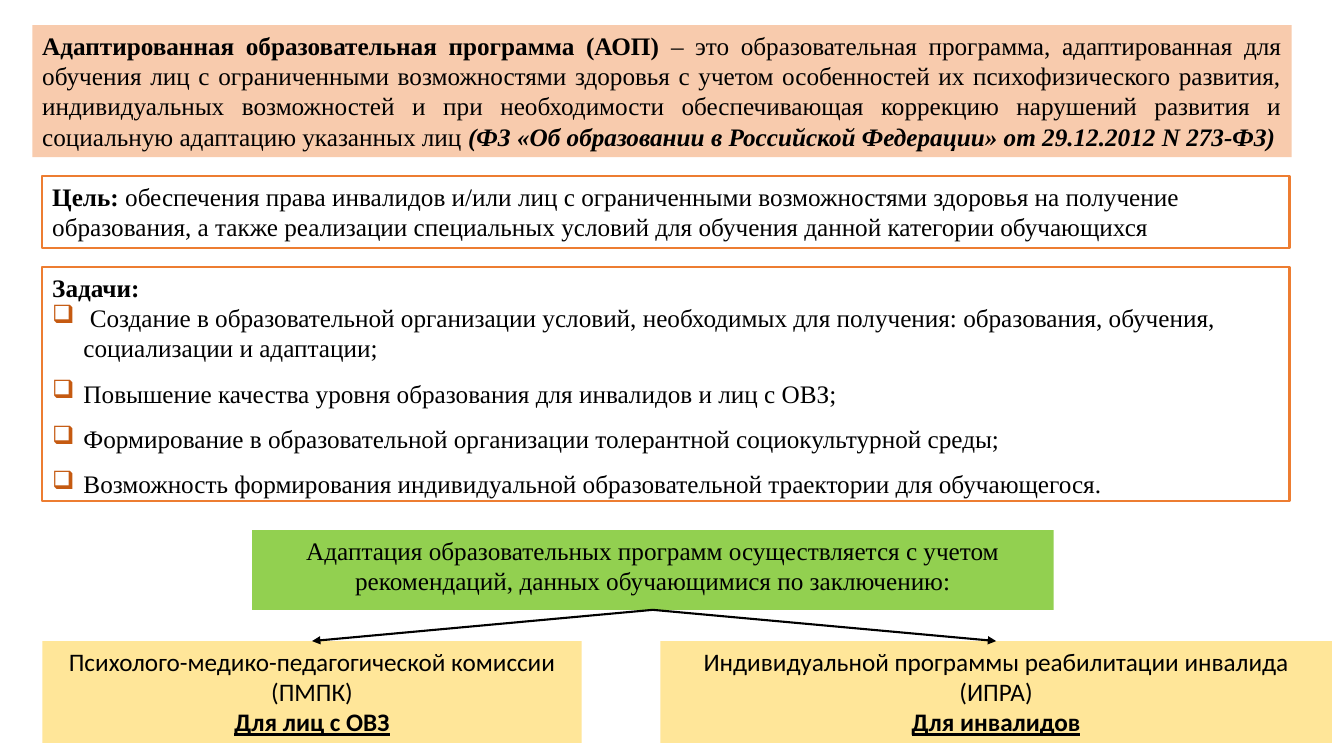
from lxml.etree import SubElement
from pptx import Presentation
from pptx.dml.color import RGBColor
from pptx.enum.shapes import MSO_CONNECTOR, MSO_SHAPE
from pptx.enum.text import MSO_ANCHOR, PP_ALIGN
from pptx.oxml.ns import qn
from pptx.util import Pt

PX = 9144  # EMU per px, 100 px to the inch
BLACK = RGBColor(0x00, 0x00, 0x00)
WHITE = RGBColor(0xFF, 0xFF, 0xFF)
PEACH = RGBColor(0xF8, 0xCB, 0xAD)
ORANGE = RGBColor(0xED, 0x7D, 0x31)
GREEN = RGBColor(0x92, 0xD0, 0x50)
YELLOW = RGBColor(0xFF, 0xE6, 0x99)
BULLET = "C55A11"
SERIF, SANS = "Times New Roman", "Calibri"
BULLET_INDENT = 31
TOP, BOTTOM = 0, 2

TASKS = [
    " Создание в образовательной организации условий, необходимых для получения: "
    "образования, обучения, социализации и адаптации;",
    "Повышение качества уровня образования для инвалидов и лиц с ОВЗ;",
    "Формирование в образовательной организации толерантной социокультурной среды;",
    "Возможность формирования индивидуальной образовательной траектории для обучающегося.",
]
COMMISSION = ["Психолого-медико-педагогической комиссии", "(ПМПК)"]
REHABILITATION = ["Индивидуальной программы реабилитации инвалида (ИПРА)"]


def add_panel(slide, box, fill, border=None):
    panel = slide.shapes.add_shape(MSO_SHAPE.RECTANGLE, *(n * PX for n in box))
    panel.shadow.inherit = False
    panel.fill.solid()
    panel.fill.fore_color.rgb = fill
    if border is None:
        panel.line.fill.background()
    else:
        panel.line.color.rgb = border
        panel.line.width = Pt(1.5)
    panel.text_frame.word_wrap = True
    panel.text_frame.vertical_anchor = MSO_ANCHOR.TOP
    return panel


def add_paragraph(panel, *runs, font=SERIF, align=PP_ALIGN.LEFT):
    """Fill the first empty paragraph or append one; runs are (text, styles) pairs."""
    frame = panel.text_frame
    paragraph = frame.paragraphs[0]
    if paragraph.runs:
        paragraph = frame.add_paragraph()
    paragraph.alignment = align
    paragraph.font.name = font
    paragraph.font.size = Pt(18)
    paragraph.font.color.rgb = BLACK
    for text, styles in runs:
        run = paragraph.add_run()
        run.text = text
        run.font.bold = "b" in styles
        run.font.italic = "i" in styles
        run.font.underline = "u" in styles
    return paragraph


def add_bullet(paragraph):
    props = paragraph._p.get_or_add_pPr()
    props.set("marL", str(BULLET_INDENT * PX))
    props.set("indent", str(-BULLET_INDENT * PX))
    bullet = SubElement(props, qn("a:buClr"))
    SubElement(bullet, qn("a:srgbClr"), val=BULLET)
    SubElement(props, qn("a:buChar"), char="❑")
    defaults = props.find(qn("a:defRPr"))
    props.append(defaults)


def add_definition(slide, box):
    panel = add_panel(slide, box, PEACH)
    add_paragraph(
        panel,
        ("Адаптированная образовательная программа (АОП) ", "b"),
        ("– это образовательная программа, адаптированная для обучения лиц с "
         "ограниченными возможностями здоровья с учетом особенностей их "
         "психофизического развития, индивидуальных возможностей и при необходимости "
         "обеспечивающая коррекцию нарушений развития и социальную адаптацию "
         "указанных лиц ", ""),
        ("(ФЗ «Об образовании в Российской Федерации» от 29.12.2012 N 273-ФЗ)", "bi"),
        align=PP_ALIGN.JUSTIFY,
    )


def add_goal(slide, box):
    panel = add_panel(slide, box, WHITE, ORANGE)
    add_paragraph(
        panel,
        ("Цель:", "b"),
        (" обеспечения права инвалидов и/или лиц с ограниченными возможностями "
         "здоровья на получение образования, а также реализации специальных условий "
         "для обучения данной категории обучающихся", ""),
    )


def add_tasks(slide, box):
    panel = add_panel(slide, box, WHITE, ORANGE)
    add_paragraph(panel, ("Задачи:", "b"))
    for index, task in enumerate(TASKS):
        paragraph = add_paragraph(panel, (task, ""))
        if index:
            paragraph.line_spacing = 1.5
        add_bullet(paragraph)


def add_arrow(slide, source, target):
    arrow = slide.shapes.add_connector(MSO_CONNECTOR.STRAIGHT, 0, 0, 0, 0)
    arrow.begin_connect(source, BOTTOM)
    arrow.end_connect(target, TOP)
    arrow.line.color.rgb = BLACK
    arrow.line.width = Pt(1.5)
    SubElement(arrow.line._get_or_add_ln(), qn("a:tailEnd"), type="triangle")
    SubElement(arrow._element.spPr, qn("a:effectLst"))


def add_adaptation(slide, box):
    """Place the green statement with the two documents it leads to below."""
    left, top, width, height = box
    statement = add_panel(slide, (left + 208, top, 795, 79), GREEN)
    add_paragraph(
        statement,
        ("Адаптация образовательных программ осуществляется с учетом рекомендаций, "
         "данных обучающимися по заключению:", ""),
        align=PP_ALIGN.CENTER,
    )
    document_height = 101
    document_top = top + height - document_height
    right_width = 666
    documents = [
        (left, 535, COMMISSION, "Для лиц с ОВЗ"),
        (left + width - right_width, right_width, REHABILITATION, "Для инвалидов"),
    ]
    for x, document_width, lines, audience in documents:
        document = add_panel(
            slide, (x, document_top, document_width, document_height), YELLOW)
        for text, styles in [(line, "") for line in lines] + [(audience, "bu")]:
            add_paragraph(document, (text, styles), font=SANS, align=PP_ALIGN.CENTER)
        add_arrow(slide, statement, document)


def main():
    deck = Presentation()
    deck.slide_width, deck.slide_height = 1333 * PX, 750 * PX
    slide = deck.slides.add_slide(deck.slide_layouts[6])
    add_definition(slide, (32, 25, 1249, 131))
    add_goal(slide, (42, 175, 1237, 71))
    add_tasks(slide, (42, 265, 1237, 232))
    add_adaptation(slide, (42, 526, 1279, 211))
    deck.save("out.pptx")


if __name__ == "__main__":
    main()
